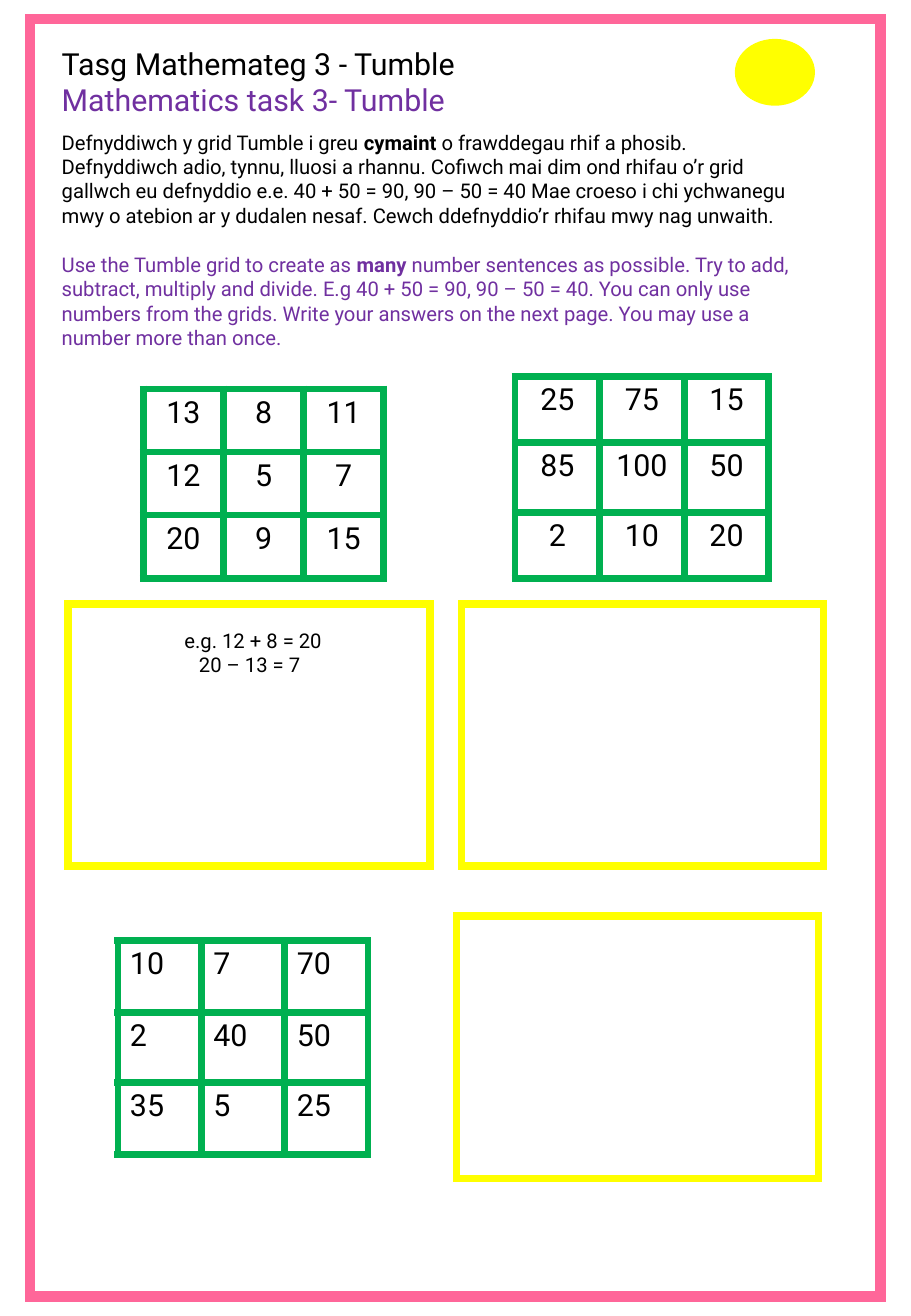
from dataclasses import dataclass

from lxml import etree
from pptx import Presentation
from pptx import util as u
from pptx.dml.color import RGBColor
from pptx.enum import shapes, text
from pptx.oxml.ns import qn

PX = 9144  # 100 px to the inch
BLACK, PURPLE, PINK = "000000", "7030A0", "FF6699"
YELLOW, GREEN = "FFFF00", "00B050"
LEFT, MID = text.PP_ALIGN.LEFT, text.PP_ALIGN.CENTER
RECT, OVAL = shapes.MSO_SHAPE.RECTANGLE, shapes.MSO_SHAPE.OVAL
Box = tuple[int, int, int, int]


@dataclass
class Para:
    words: str  # bold parts stand between asterisks
    color: str = BLACK
    gap: int = 0
    indent: int = 0


@dataclass
class Note:
    box: Box
    size: int
    paras: list[Para]


@dataclass
class Grid:
    box: Box
    rows: list[int]
    align: text.PP_ALIGN
    nums: list[list[int]]


@dataclass
class Frame:
    box: Box
    line: str = YELLOW
    width: float = 4.5


TITLE = Note((41, 32, 423, 71), 18, [
    Para("Tasg Mathemateg 3 - Tumble"),
    Para("Mathematics task 3- Tumble", PURPLE),
])
TASK = Note((41, 102, 630, 313), 12, [
    Para("Defnyddiwch y grid Tumble i greu *cymaint *o frawddegau rhif a phosib. "
         "Defnyddiwch adio, tynnu, lluosi a rhannu. Cofiwch mai dim ond rhifau "
         "o’r grid gallwch eu defnyddio e.e. 40 + 50 = 90, 90 – 50 = 40 Mae croeso "
         "i chi ychwanegu mwy o atebion ar y dudalen nesaf. Cewch ddefnyddio’r "
         "rhifau mwy nag unwaith."),
    Para("Use the Tumble grid to create as *many *number sentences as possible. "
         "Try to add, subtract, multiply and divide. E.g 40 + 50 = 90, "
         "90 – 50 = 40. You can only use numbers from the grids. Write your "
         "answers on the next page. You may use a number more than once.",
         PURPLE, gap=15),
])
SAMPLE = Note((142, 512, 166, 50), 12, [
    Para("e.g. 12 + 8 = 20"),
    Para("20 – 13 = 7", indent=12),
])
GRIDS = [
    Grid((424, 310, 209, 166), [54, 58, 54], MID,
         [[25, 75, 15], [85, 100, 50], [2, 10, 20]]),
    Grid((97, 774, 206, 176), [59, 58, 59], LEFT,
         [[10, 7, 70], [2, 40, 50], [35, 5, 25]]),
    Grid((118, 320, 198, 156), [52, 52, 52], MID,
         [[13, 8, 11], [12, 5, 7], [20, 9, 15]]),
]
BORDER = Frame((25, 16, 700, 1051), PINK, 6)
PANELS = [Frame((x, y, 298, 216)) for x, y in ((56, 497), (380, 497), (376, 754))]


def px(*vals: int) -> list[u.Emu]:
    return [u.Emu(v * PX) for v in vals]


def rgb(code: str) -> RGBColor:
    return RGBColor.from_string(code)


def style(font, size: int, color: str = BLACK, bold: bool = False) -> None:
    look = {"name": "Roboto", "size": u.Pt(size), "bold": bold}
    for key, val in look.items():
        setattr(font, key, val)
    font.color.rgb = rgb(color)


def add_note(slide, note: Note) -> None:
    frame = slide.shapes.add_textbox(*px(*note.box)).text_frame
    frame.word_wrap = True
    for i, item in enumerate(note.paras):
        para = frame.add_paragraph() if i else frame.paragraphs[0]
        if item.gap:
            para.space_before = u.Pt(item.gap)
        if item.indent:
            para._p.get_or_add_pPr().set("marL", str(item.indent * PX))
        for j, part in enumerate(item.words.split("*")):
            run = para.add_run()
            run.text = part
            style(run.font, note.size, item.color, j % 2 == 1)


def edge(cell, color: str, width: float) -> None:
    """Draw a solid line on all four sides of a cell."""
    props = cell._tc.get_or_add_tcPr()
    for side in ("lnL", "lnR", "lnT", "lnB"):
        line = etree.SubElement(props, qn(f"a:{side}"), w=str(u.Pt(width)))
        fill = etree.SubElement(line, qn("a:solidFill"))
        etree.SubElement(fill, qn("a:srgbClr"), val=color)


def add_grid(slide, grid: Grid) -> None:
    count = len(grid.nums[0])
    table = slide.shapes.add_table(len(grid.rows), count, *px(*grid.box)).table
    table.first_row = table.horz_banding = False
    for row, high in zip(table.rows, grid.rows):
        row.height = px(high)[0]
    for r, nums in enumerate(grid.nums):
        for c, num in enumerate(nums):
            cell = table.cell(r, c)
            edge(cell, GREEN, 4.5)
            cell.fill.background()
            para = cell.text_frame.paragraphs[0]
            para.alignment = grid.align
            run = para.add_run()
            run.text = str(num)
            style(run.font, 18)


def add_frame(slide, frame: Frame) -> None:
    """Draw an unfilled rectangle with sharp corners."""
    shape = slide.shapes.add_shape(RECT, *px(*frame.box))
    shape.shadow.inherit = False
    shape.fill.background()
    shape.line.color.rgb = rgb(frame.line)
    shape.line.width = u.Pt(frame.width)
    line = shape._element.spPr.find(qn("a:ln"))
    etree.SubElement(line, qn("a:miter"), lim="800000")


def add_sun(slide, box: Box) -> None:
    sun = slide.shapes.add_shape(OVAL, *px(*box))
    sun.shadow.inherit = False
    sun.fill.solid()
    sun.fill.fore_color.rgb = rgb(YELLOW)
    sun.line.fill.background()


def main() -> None:
    deck = Presentation()
    deck.slide_width, deck.slide_height = px(750, 1083)
    slide = deck.slides.add_slide(deck.slide_layouts[6])
    add_note(slide, TITLE)
    add_frame(slide, BORDER)
    add_note(slide, TASK)
    for grid in GRIDS:
        add_grid(slide, grid)
    for panel in PANELS:
        add_frame(slide, panel)
    add_note(slide, SAMPLE)
    add_sun(slide, (605, 32, 66, 55))
    deck.save("out.pptx")


if __name__ == "__main__":
    main()
